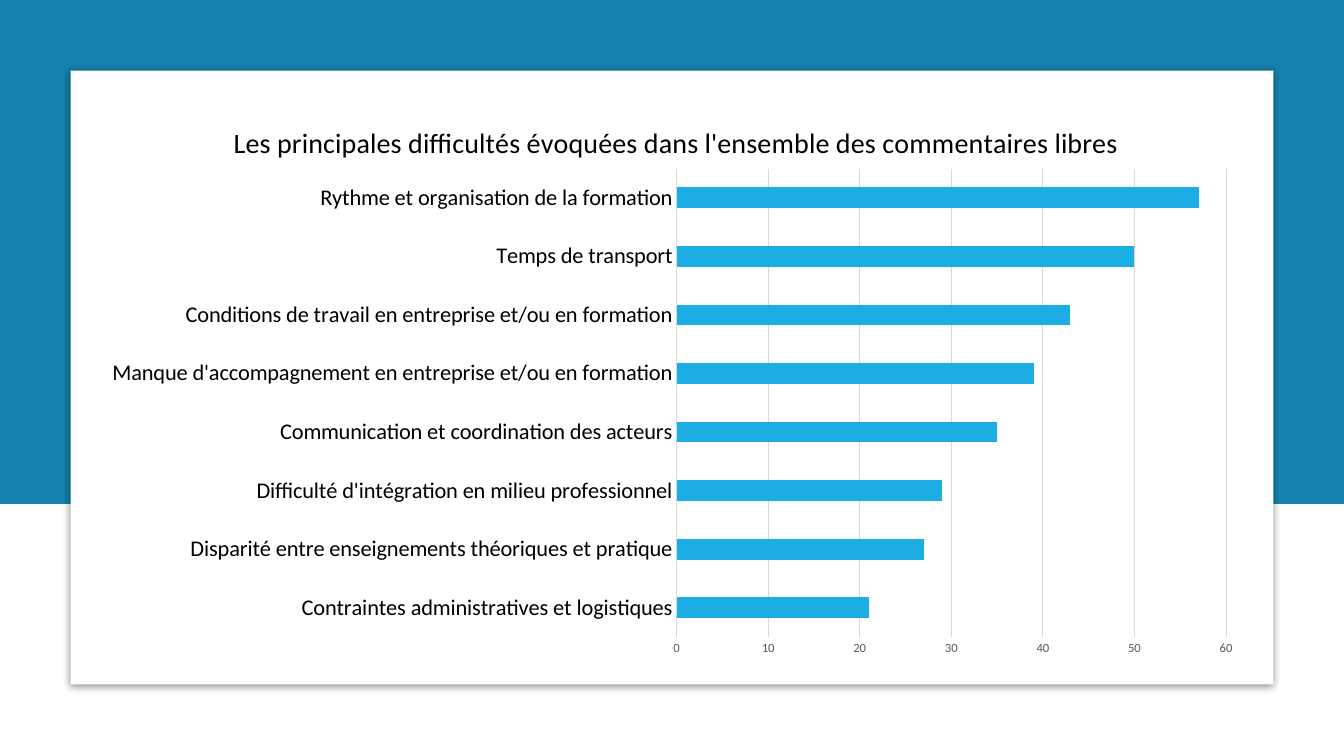
from dataclasses import dataclass

from lxml.etree import SubElement
from pptx import Presentation
from pptx.chart.axis import CategoryAxis, ValueAxis
from pptx.chart.data import CategoryChartData
from pptx.dml.color import RGBColor
from pptx.enum.chart import XL_CHART_TYPE, XL_TICK_MARK
from pptx.enum.shapes import MSO_SHAPE
from pptx.oxml import parse_xml
from pptx.oxml.ns import nsdecls, qn
from pptx.shapes.autoshape import Shape
from pptx.slide import Slide
from pptx.util import Inches, Pt

BAND_BLUE = RGBColor(0x14, 0x82, 0xAC)
BAR_BLUE = RGBColor(0x1C, 0xAD, 0xE4)
WHITE = RGBColor(0xFF, 0xFF, 0xFF)
BLACK = RGBColor(0, 0, 0)
GRID_GREY = RGBColor(0xD9, 0xD9, 0xD9)
LABEL_GREY = RGBColor(0x59, 0x59, 0x59)
FONT = "Calibri"
TITLE = "Les principales difficultés évoquées dans l'ensemble des commentaires libres"


@dataclass
class Panel:
    left: float
    top: float
    width: float
    height: float
    color: RGBColor


@dataclass
class Difficulty:
    label: str
    mentions: int


BAND = Panel(0, 0, 13.33, 5, BAND_BLUE)
CARD = Panel(0.7, 0.7, 11.93, 6.09, WHITE)

# From the bottom bar to the top bar
DIFFICULTIES = [
    Difficulty("Contraintes administratives et logistiques", 21),
    Difficulty("Disparité entre enseignements théoriques et pratique", 27),
    Difficulty("Difficulté d'intégration en milieu professionnel", 29),
    Difficulty("Communication et coordination des acteurs", 35),
    Difficulty("Manque d'accompagnement en entreprise et/ou en formation", 39),
    Difficulty("Conditions de travail en entreprise et/ou en formation", 43),
    Difficulty("Temps de transport", 50),
    Difficulty("Rythme et organisation de la formation", 57),
]


def add_panel(slide: Slide, panel: Panel) -> Shape:
    shape = slide.shapes.add_shape(
        MSO_SHAPE.RECTANGLE, Inches(panel.left), Inches(panel.top),
        Inches(panel.width), Inches(panel.height))
    shape.shadow.inherit = False
    shape.fill.solid()
    shape.fill.fore_color.rgb = panel.color
    shape.line.fill.background()
    return shape


def add_soft_shadow(shape: Shape) -> None:
    effects = shape._element.spPr.find(qn("a:effectLst"))
    effects.append(parse_xml(
        f'<a:outerShdw {nsdecls("a")} blurRad="{Pt(5)}" dist="{Pt(1.4)}" '
        'dir="5400000" algn="t" rotWithShape="0">'
        '<a:srgbClr val="000000"><a:alpha val="43000"/></a:srgbClr></a:outerShdw>'))


def make_layout(**settings: object):
    layout = parse_xml(f'<c:layout {nsdecls("c")}><c:manualLayout/></c:layout>')
    for name, value in settings.items():
        SubElement(layout[0], qn(f"c:{name}")).set("val", str(value))
    return layout


def style_axis(axis: CategoryAxis | ValueAxis, size: int, color: RGBColor) -> None:
    axis.major_tick_mark = XL_TICK_MARK.NONE
    axis.minor_tick_mark = XL_TICK_MARK.NONE
    font = axis.tick_labels.font
    font.name, font.size = FONT, Pt(size)
    font.color.rgb = color


def add_difficulty_chart(slide: Slide) -> None:
    data = CategoryChartData()
    data.categories = [difficulty.label for difficulty in DIFFICULTIES]
    data.add_series("Series 1", [difficulty.mentions for difficulty in DIFFICULTIES])
    chart = slide.shapes.add_chart(
        XL_CHART_TYPE.BAR_CLUSTERED, Inches(0.88), Inches(0.88),
        Inches(11.57), Inches(5.74), data).chart
    chart.has_legend = False
    chart.font.name, chart.font.size = FONT, Pt(10)
    chart.font.color.rgb = BLACK

    # Title
    chart.has_title = True
    title = chart.chart_title
    title.text_frame.text = TITLE
    font = title.text_frame.paragraphs[0].font
    font.name, font.size, font.bold = FONT, Pt(20), False
    font.color.rgb = BLACK
    for layout in title._element.findall(qn("c:layout")):
        title._element.remove(layout)
    title._element.find(qn("c:tx")).addnext(
        make_layout(xMode="edge", yMode="edge", x=0.12, y=0.05))

    # Bars
    plot = chart.plots[0]
    plot.gap_width = 182
    plot.vary_by_categories = False
    fill = plot.series[0].format.fill
    fill.solid()
    fill.fore_color.rgb = BAR_BLUE

    # Axes and grid
    style_axis(chart.category_axis, 16, BLACK)
    style_axis(chart.value_axis, 9, LABEL_GREY)
    chart.value_axis.minimum_scale = 0
    chart.value_axis.maximum_scale = 60
    chart.value_axis.major_unit = 10
    chart.value_axis.format.line.fill.background()
    for line in (chart.category_axis.format.line,
                 chart.value_axis.major_gridlines.format.line):
        line.color.rgb = GRID_GREY
        line.width = Pt(0.75)

    # Plot area, leaving room for the long labels
    plot_area = chart._chartSpace.chart.plotArea
    for layout in plot_area.findall(qn("c:layout")):
        plot_area.remove(layout)
    plot_area.insert(0, make_layout(
        layoutTarget="inner", xMode="edge", yMode="edge",
        x=0.504, y=0.138, w=0.471, h=0.81))


def main() -> None:
    presentation = Presentation()
    presentation.slide_width = Inches(13.33)
    presentation.slide_height = Inches(7.5)
    slide = presentation.slides.add_slide(presentation.slide_layouts[6])

    # Background band and card
    add_panel(slide, BAND)
    add_soft_shadow(add_panel(slide, CARD))

    add_difficulty_chart(slide)
    presentation.save("out.pptx")


if __name__ == "__main__":
    main()
